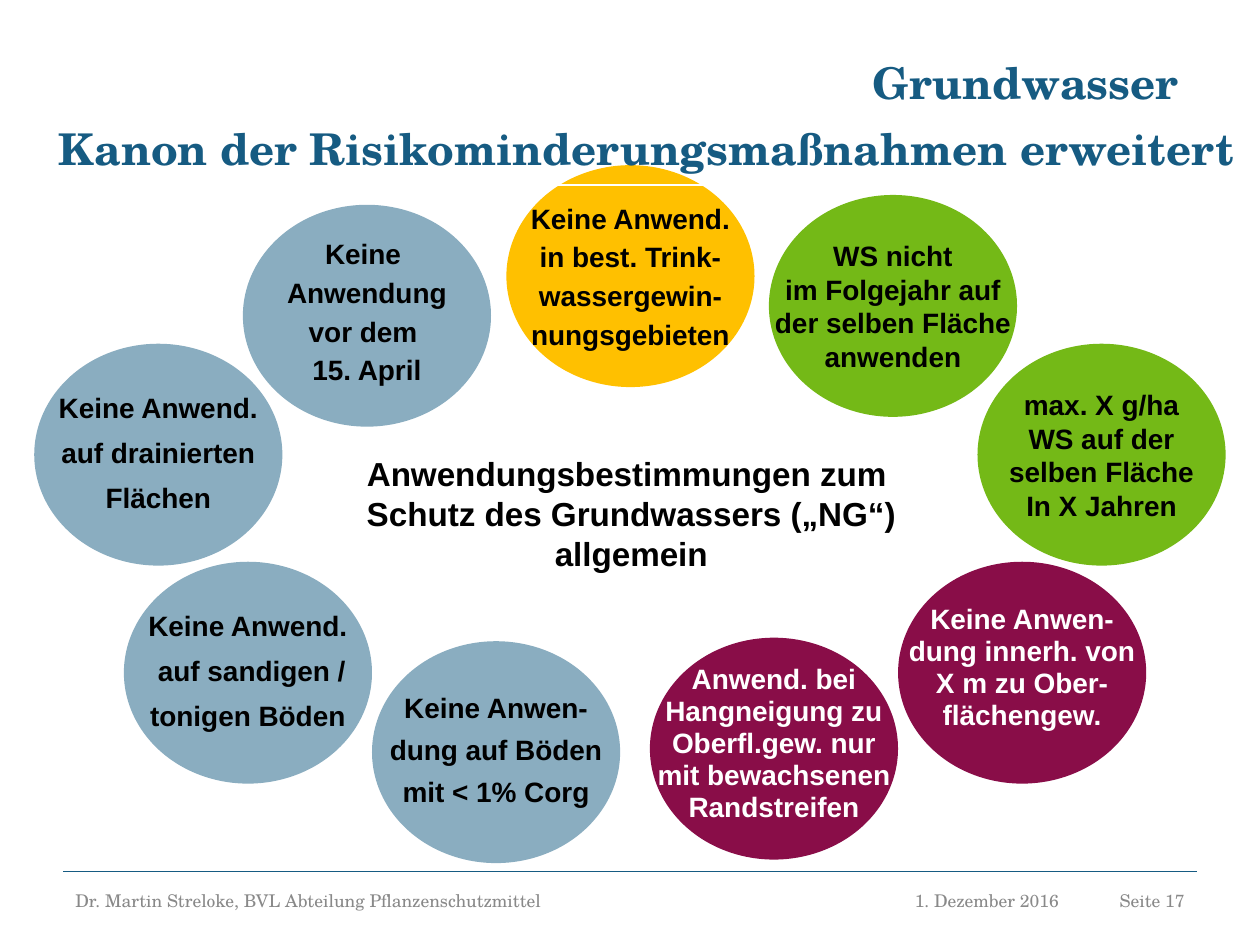
from dataclasses import dataclass
from lxml import etree
from pptx import Presentation
from pptx.dml.color import RGBColor
from pptx.enum.shapes import MSO_CONNECTOR, MSO_SHAPE
from pptx.enum.text import MSO_ANCHOR, PP_ALIGN
from pptx.oxml.ns import qn
from pptx.slide import Slide
from pptx.text.text import TextFrame
from pptx.util import Pt

OVAL, RECT = MSO_SHAPE.OVAL, MSO_SHAPE.RECTANGLE
LINE = MSO_CONNECTOR.STRAIGHT
LEFT, MID, RIGHT = PP_ALIGN.LEFT, PP_ALIGN.CENTER, PP_ALIGN.RIGHT
TOP, CENTER = MSO_ANCHOR.TOP, MSO_ANCHOR.MIDDLE

BLUE = RGBColor(0x8A, 0xAD, 0xC0)
GOLD = RGBColor(0xFF, 0xC0, 0x00)
GREEN = RGBColor(0x74, 0xB9, 0x17)
WINE = RGBColor(0x89, 0x0D, 0x48)
TEAL = RGBColor(0x16, 0x5B, 0x82)
GRAY = RGBColor(0x89, 0x89, 0x89)
BLACK = RGBColor(0, 0, 0)
WHITE = RGBColor(0xFF, 0xFF, 0xFF)

SERIF = "TeX Gyre Schola"
WIDE, HIGH = 141.8, 126.8
BODY = {"name": "Arial", "size": Pt(16), "bold": True}
HEAD = {"name": SERIF, "size": Pt(25), "bold": True}
FOOT = {"name": SERIF, "size": Pt(10), "bold": False}


@dataclass
class Rule:
    left: float
    top: float
    fill: RGBColor
    lines: list[str]
    pitch: float = 1.0
    gap: float = 0
    ink: RGBColor = BLACK


@dataclass
class Label:
    left: float
    top: float
    width: float
    height: float
    lines: list[str]
    font: dict
    ink: RGBColor
    align: PP_ALIGN
    anchor: MSO_ANCHOR = TOP
    wrap: bool = True
    rim: bool = False


RULES = [
    Rule(19.6, 196.4, BLUE, ["Keine Anwend.", "auf drainierten", "Flächen"], 0.9, 8.6),
    Rule(289.4, 94.4, GOLD,
         ["Keine Anwend.", "in best. Trink-", "wassergewin-", "nungsgebieten"], 1, 3),
    Rule(439.4, 111.4, GREEN,
         ["WS nicht", "im Folgejahr auf", "der selben Fläche", "anwenden"]),
    Rule(212.6, 366.4, BLUE, ["Keine Anwen-", "dung auf Böden", "mit < 1% Corg"], 0.8, 8.6),
    Rule(70.8, 321, BLUE, ["Keine Anwend.", " auf sandigen /", "tonigen Böden"], 0.9, 8.6),
    Rule(371.4, 364.4, WINE,
         ["Anwend. bei", "Hangneigung zu", "Oberfl.gew. nur", "mit bewachsenen",
          "Randstreifen"], 0.5, 8.6, WHITE),
    Rule(513.2, 321, WINE,
         ["Keine Anwen-", "dung innerh. von", "X m zu Ober-", "flächengew."],
         0.5, 8.6, WHITE),
    Rule(138.8, 117, BLUE, ["Keine ", "Anwendung", "vor dem ", "15. April"], 0.7, 8.6),
    Rule(558.6, 196.4, GREEN,
         ["max. X g/ha", "WS auf der", "selben Fläche", "In X Jahren"]),
]

BACK = [
    Label(56.9, 28.1, 623.5, 56.9, ["Grundwasser"], HEAD, TEAL, RIGHT, rim=True),
    Label(36, 500.4, 437.8, 28.8,
          ["Dr. Martin Streloke, BVL Abteilung Pflanzenschutzmittel"],
          FOOT, GRAY, LEFT, CENTER, rim=True),
    Label(507.6, 500.4, 104.4, 28.8, ["1. Dezember 2016"], FOOT, GRAY, RIGHT, CENTER),
    Label(624.2, 500.4, 59.8, 28.8, ["Seite 17"], FOOT, GRAY, RIGHT, CENTER),
]

FRONT = [
    Label(200.2, 255.6, 321.1, 76.3,
          ["Anwendungsbestimmungen zum ", "Schutz des Grundwassers („NG“)", "allgemein"],
          BODY | {"size": Pt(19)}, BLACK, MID, wrap=False),
    Label(20.2, 66.2, 691.9, 39.6,
          ["Kanon der Risikominderungsmaßnahmen erweitert"],
          HEAD, TEAL, RIGHT, rim=True),
]


def write(frame: TextFrame, lines: list[str], font: dict, ink: RGBColor,
          align: PP_ALIGN, pitch: float = 1.0, gap: float = 0) -> None:
    for i, line in enumerate(lines):
        para = frame.paragraphs[0] if i == 0 else frame.add_paragraph()
        form = {"alignment": align, "line_spacing": pitch,
                "space_before": Pt(gap if i else 0)}
        for key, value in form.items():
            setattr(para, key, value)
        run = para.add_run()
        run.text = line
        for key, value in font.items():
            setattr(run.font, key, value)
        run.font.color.rgb = ink


def draw_rule(slide: Slide, rule: Rule) -> None:
    oval = slide.shapes.add_shape(
        OVAL, Pt(rule.left), Pt(rule.top), Pt(WIDE), Pt(HIGH))
    oval.shadow.inherit = False
    oval.fill.solid()
    oval.fill.fore_color.rgb = rule.fill
    oval.line.fill.background()
    frame = oval.text_frame
    frame.word_wrap = False
    frame.vertical_anchor = CENTER
    write(frame, rule.lines, BODY, rule.ink, MID, rule.pitch, rule.gap)


def draw_label(slide: Slide, label: Label) -> None:
    area = Pt(label.left), Pt(label.top), Pt(label.width), Pt(label.height)
    if label.rim:
        box = slide.shapes.add_shape(RECT, *area)
        box.shadow.inherit = False
        box.fill.background()
        box.line.color.rgb = WHITE
        box.line.width = Pt(0.75)
    else:
        box = slide.shapes.add_textbox(*area)
    frame = box.text_frame
    frame.word_wrap = label.wrap
    frame.vertical_anchor = label.anchor
    write(frame, label.lines, label.font, label.ink, label.align)


def draw_line(slide: Slide) -> None:
    line = slide.shapes.add_connector(LINE, Pt(36), Pt(498), Pt(684), Pt(498))
    line.line.color.rgb = TEAL
    line.line.width = Pt(1)
    etree.SubElement(line._element.spPr, qn("a:effectLst"))


def main() -> None:
    deck = Presentation()
    deck.slide_width, deck.slide_height = Pt(720), Pt(540)
    slide = deck.slides.add_slide(deck.slide_layouts[6])
    draw_line(slide)
    for label in BACK:
        draw_label(slide, label)
    for rule in RULES:
        draw_rule(slide, rule)
    for label in FRONT:
        draw_label(slide, label)
    deck.save("out.pptx")


if __name__ == "__main__":
    main()
